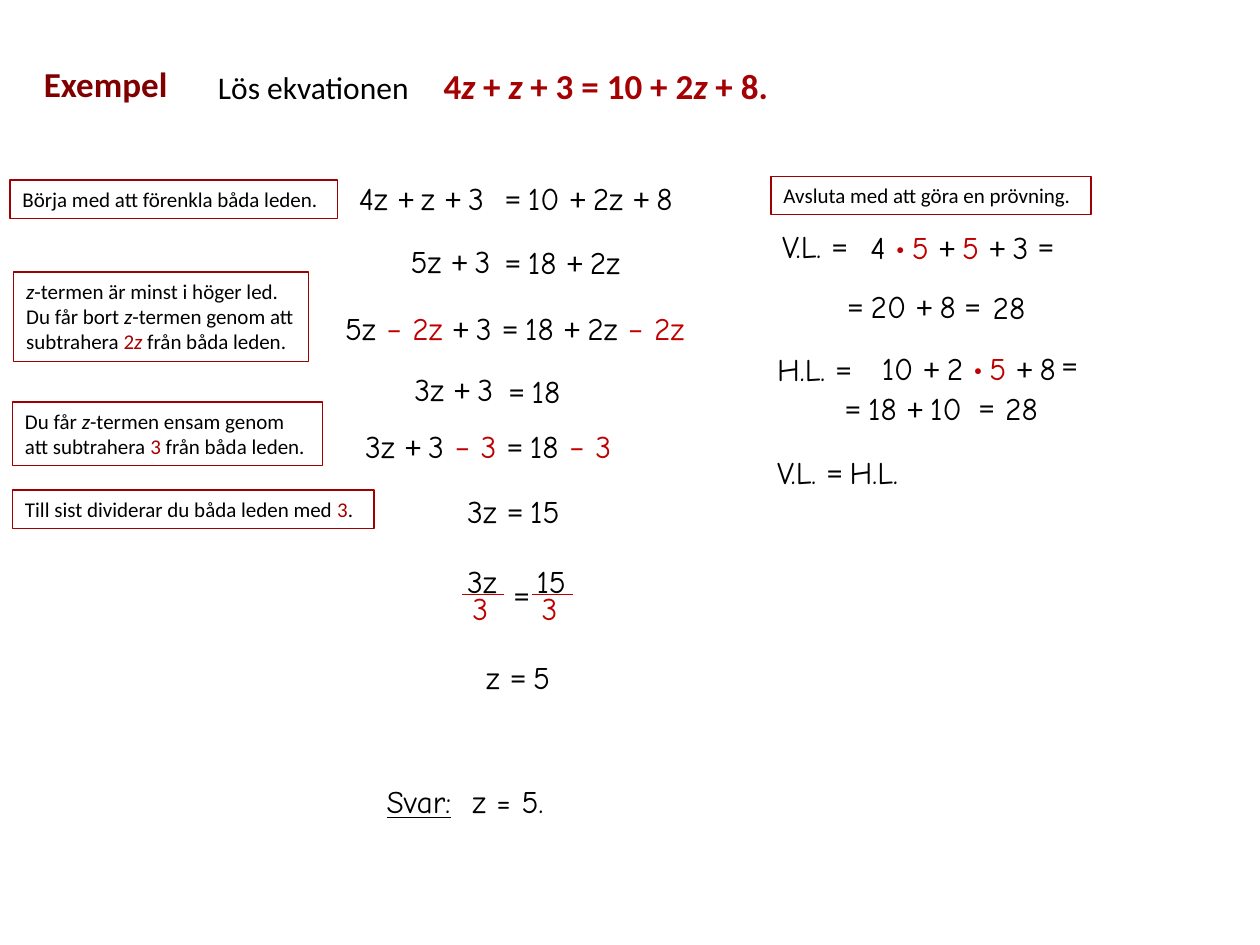
from itertools import groupby

from lxml import etree
from pptx import Presentation
from pptx import util as u
from pptx.dml.color import RGBColor
from pptx.enum import shapes, text
from pptx.oxml.ns import qn

COLS, ROWS = 100, 75
UNIT = u.Inches(10) // COLS
PLAIN, HAND = "Calibri", "Comic Neue"
BLACK, RED, DARK_RED, BORDER, MAROON = "000000", "C00000", "A50002", "9F0002", "800000"
SYMBOLS = "+=–·"
MARKS = "~_*^"

NOTES = [
    (0.8, 14.3, 26, 1, "Börja med att förenkla båda leden."),
    (1.1, 21.6, 23.4, 3, "_z_-termen är minst i höger led. Du får bort _z_-termen "
                         "genom att subtrahera ~2_z_~ från båda leden."),
    (1, 31.9, 24.6, 2, "Du får _z_-termen ensam genom att subtrahera ~3~ från båda leden."),
    (1, 38.9, 28.7, 1, "Till sist dividerar du båda leden med ~3~."),
    (61.2, 14, 25.4, 1, "Avsluta med att göra en prövning."),
]
SOLUTION = [
    (27.5, 13.7, 13.4, "4z + z + 3"),
    (39.1, 13.7, 20.1, "= 10 + 2z + 8"),
    (39.1, 18.8, 12.9, "= 18 + 2z"),
    (26.4, 24, 33.3, "5z ~– 2z ~+ 3 = 18 + 2z ~– 2z~"),
    (39.4, 29, 12.9, "= 18"),
    (28, 33.4, 24, "3z + 3 ~– 3 ~= 18 ~– 3~"),
    (36.1, 38.6, 11.6, "3z = 15"),
    (39.8, 45.2, 4, "="),
    (37.6, 51.7, 8.7, "z = 5"),
]
CHECK = [
    (68.1, 17.6, 18.5, "4 ~*·* 5 ~+ ~5 ~+ 3"),
    (81.4, 17.5, 5.3, "="),
    (75.6, 22.3, 5.3, "="),
    (77.8, 22.4, 5.4, "28"),
    (69, 27.2, 18.5, "10 + 2 ~*·* 5 ~+ 8"),
    (83.3, 27, 5.3, "="),
    (76.7, 30.3, 5.3, "="),
    (78.8, 30.4, 5.4, "28"),
    (60.7, 35.5, 14.9, "V.L. = H.L."),
]
FITTED = [
    (31.6, 18.7, 8.8, "5z + 3"),
    (31.9, 28.9, 8.8, "3z + 3"),
    (61.1, 17.5, 9.2, "V.L. ="),
    (66.3, 22.3, 11.4, "= 20 + 8"),
    (60.7, 27.3, 9.4, "H.L. ="),
    (66.1, 30.4, 11.9, "= 18 + 10"),
]


def rgb(value):
    return RGBColor.from_string(value)


def grid(*cells):
    return [u.Emu(round(c * UNIT)) for c in cells]


def segments(markup, font, symbols):
    on, styled, previous = set(), [], ""
    for char in markup:
        if char in MARKS:
            on ^= {char}
            continue
        after_symbol = char == " " and previous in tuple("+=·")
        plain = char in symbols or (symbols and after_symbol)
        styled.append((char, PLAIN if plain else font, frozenset(on)))
        previous = char
    for (face, marks), group in groupby(styled, key=lambda item: item[1:]):
        yield "".join(item[0] for item in group), face, marks


def write(tf, markup, size, font, symbols=SYMBOLS, accent=RED, color=BLACK, tab=None):
    p = tf.paragraphs[0]
    p.alignment = text.PP_ALIGN.LEFT
    for content, face, marks in segments(markup, font, symbols):
        r = p.add_run()
        r.text = content
        r.font.name = face
        r.font.size = u.Pt(size)
        r.font.color.rgb = rgb(accent if "~" in marks else color)
        r.font.italic = "_" in marks
        r.font.bold = "*" in marks
        r.font.underline = "^" in marks
    if tab:
        stops = etree.SubElement(p._p.get_or_add_pPr(), qn("a:tabLst"))
        etree.SubElement(stops, qn("a:tab"), pos=str(grid(tab)[0]), algn="l")


def add_text(s, x, y, w, markup, h=4, size=18, font=HAND, wrap=True, **style):
    tf = s.shapes.add_textbox(*grid(x, y, w, h)).text_frame
    tf.word_wrap = wrap
    write(tf, markup, size, font, **style)


def add_title(s, x, y, w, h, markup):
    sp = s.shapes.title
    sp.left, sp.top, sp.width, sp.height = grid(x, y, w, h)
    tf = sp.text_frame
    tf.word_wrap = True
    tf.auto_size = text.MSO_AUTO_SIZE.NONE
    tf.vertical_anchor = text.MSO_ANCHOR.TOP
    write(tf, markup, 18, PLAIN, accent=DARK_RED, tab=17.9)
    for r in tf.paragraphs[0].runs:
        if r.font.bold:
            r.font.size = u.Pt(20)


def add_note(s, x, y, w, lines, markup):
    sp = s.shapes.add_shape(shapes.MSO_SHAPE.RECTANGLE, *grid(x, y, w, 1 + 2.03 * lines))
    sp.shadow.inherit = False
    sp.fill.background()
    sp.line.color.rgb = rgb(BORDER)
    sp.line.width = u.Pt(0.75)
    tf = sp.text_frame
    tf.word_wrap = True
    tf.vertical_anchor = text.MSO_ANCHOR.TOP
    write(tf, markup, 12, PLAIN, accent=DARK_RED)


def add_fraction(s, x, y, numerator, denominator):
    add_text(s, x - 0.6, y - 3.05, 4.9, numerator, wrap=False)
    add_text(s, x - 0.2, y - 0.95, 3.6, f"~{denominator}~", wrap=False)
    bar = s.shapes.add_connector(shapes.MSO_CONNECTOR.STRAIGHT, *grid(x, y, x + 3.3, y))
    bar.line.color.rgb = rgb(RED)
    bar.line.width = u.Pt(0.75)
    etree.SubElement(bar._element.spPr, qn("a:effectLst"))


def main():
    prs = Presentation()
    prs.slide_width, prs.slide_height = grid(COLS, ROWS)
    s = prs.slides.add_slide(prs.slide_layouts[5])
    add_title(s, 16.3, 4.6, 64.5, 4.4,
              "Lös ekvationen\t~*4_z_ + _z_ + 3 = 10 + 2_z_ + 8.*~")
    add_text(s, 2.5, 4.5, 12.7, "*Exempel*", h=4.4, size=20, font=PLAIN, color=MAROON)
    for x, y, w, markup in SOLUTION + CHECK:
        add_text(s, x, y, w, markup)
    for x, y, w, markup in FITTED:
        add_text(s, x, y, w, markup, wrap=False)
    add_fraction(s, 36.7, 47.2, "3z", "3")
    add_fraction(s, 42.2, 47.2, "15", "3")
    add_text(s, 29.7, 61.6, 25.1, "^Svar:^\tz = 5.", symbols="", tab=6.8)
    for note in NOTES:
        add_note(s, *note)
    prs.save("out.pptx")


if __name__ == "__main__":
    main()
